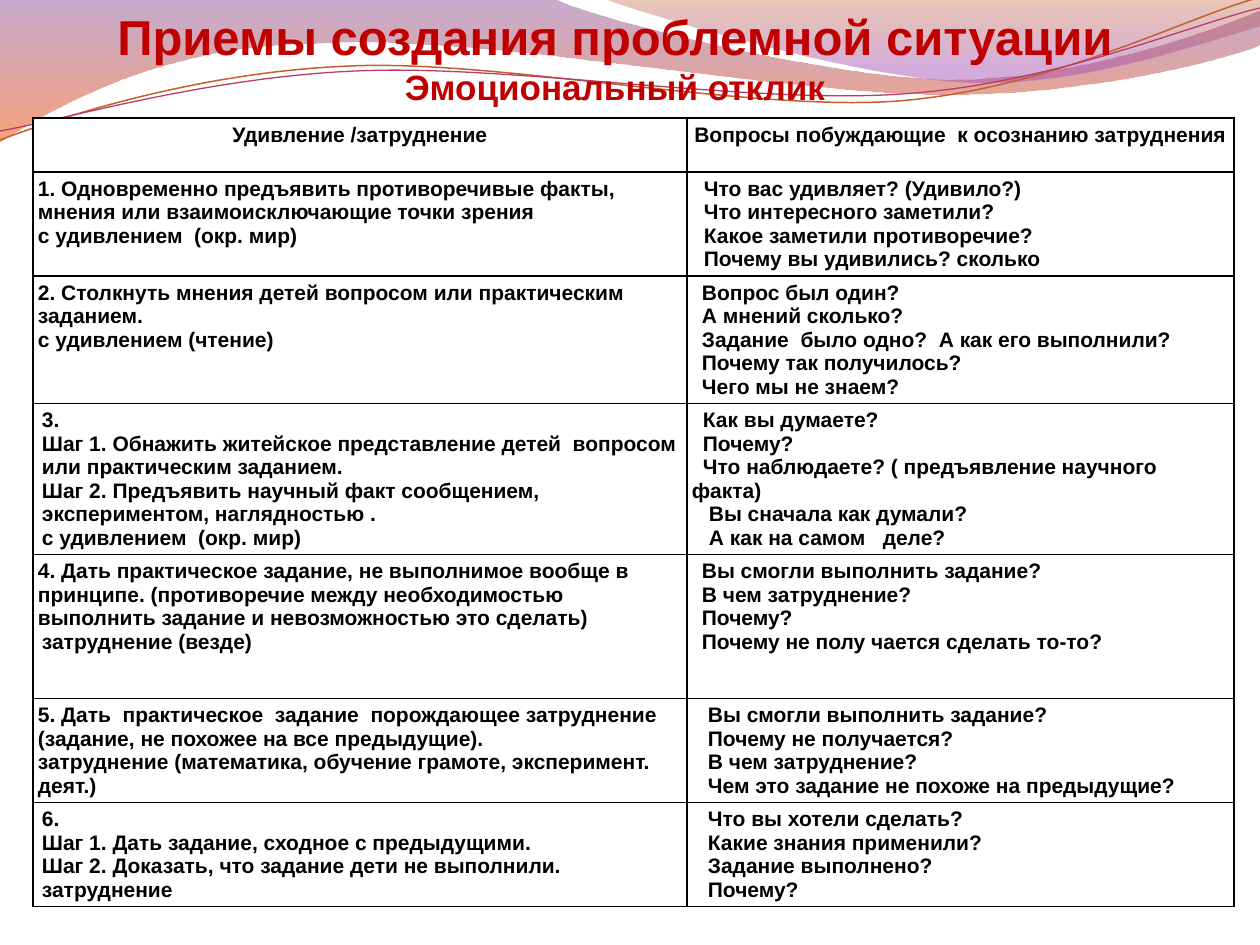
import pptx
import pptx.dml.color
import pptx.enum.text
import pptx.oxml
import pptx.oxml.ns
import pptx.util
from lxml import etree

EMU_PER_PX = 914400 / 126

WHITE = pptx.dml.color.RGBColor(0xFF, 0xFF, 0xFF)
BLACK = pptx.dml.color.RGBColor(0x00, 0x00, 0x00)
RED = pptx.dml.color.RGBColor(0xC0, 0x00, 0x00)
PLUM = pptx.dml.color.RGBColor(0x83, 0x45, 0x91)
ORANGE = pptx.dml.color.RGBColor(0xF3, 0x53, 0x07)
RUST = pptx.dml.color.RGBColor(0xB7, 0x49, 0x15)
VIOLET = pptx.dml.color.RGBColor(0xA1, 0x4B, 0xB4)
COPPER = pptx.dml.color.RGBColor(0xC4, 0x5F, 0x30)
ROSE = pptx.dml.color.RGBColor(0xB8, 0x3D, 0x68)
CENTER = pptx.enum.text.PP_ALIGN.CENTER
LEFT = pptx.enum.text.PP_ALIGN.LEFT


def write(paragraph, text, size=12, color=BLACK, align=LEFT, margin=0, indent=0):
    paragraph.alignment = align
    properties = paragraph._p.get_or_add_pPr()
    properties.set("marL", str(round(margin * EMU_PER_PX)))
    properties.set("indent", str(round(indent * EMU_PER_PX)))
    run = paragraph.add_run()
    run.text = text
    run.font.name = "Arial"
    run.font.size = pptx.util.Pt(size)
    run.font.bold = True
    run.font.color.rgb = color


def trace(shapes, start, segments, close):
    """Two numbers make a straight segment, six make a cubic curve."""
    ends = [segment[-2:] for segment in segments]
    left = min(x for x, y in [start, *ends])
    top = min(y for x, y in [start, *ends])
    builder = shapes.build_freeform(*start, scale=EMU_PER_PX)
    builder.add_line_segments(ends, close=close)
    outline = builder.convert_to_shape()
    outline.shadow.inherit = False
    steps = list(outline._element.iter(pptx.oxml.ns.qn("a:lnTo")))
    for step, segment in zip(steps, segments):
        if len(segment) == 6:
            step.tag = pptx.oxml.ns.qn("a:cubicBezTo")
            for number in (0, 2):
                control = etree.Element(pptx.oxml.ns.qn("a:pt"))
                control.set("x", str(segment[number] - left))
                control.set("y", str(segment[number + 1] - top))
                step.insert(number // 2, control)
    return outline


deck = pptx.Presentation()
deck.slide_width = round(1260 * EMU_PER_PX)
deck.slide_height = round(945 * EMU_PER_PX)
slide = deck.slides.add_slide(deck.slide_layouts[5])

# Translucent waves along the top: start, segments, gradient stops
waves = [
    ((0, -1), [(554, -1), (600, 21, 837, 79, 955, 79), (1074, 79, 1207, 33, 1260, 11),
               (1261, 45), (1239, 55, 1096, 96, 940, 94), (784, 94, 481, 35, 324, 43),
               (163, 44, 58, 105, -1, 142)],
     [(0, PLUM, 45), (1, ORANGE, 55)]),
    ((604, -1), [(641, 14, 859, 78, 969, 82), (1079, 87, 1211, 40, 1260, 26), (1260, 0)],
     [(0, RUST, 30), (0.8, VIOLET, 45)]),
]
for start, segments, stops in waves:
    wave = trace(slide.shapes, start, segments, close=True)
    wave.line.fill.background()
    wave.fill.gradient()
    wave.fill.gradient_angle = 270
    for stop, (position, color, opacity) in zip(wave.fill.gradient_stops, stops):
        stop.position = position
        stop.color.rgb = color
        tint = stop._gs.find(pptx.oxml.ns.qn("a:srgbClr"))
        etree.SubElement(tint, pptx.oxml.ns.qn("a:alpha")).set("val", str(opacity * 1000))

# Thin lines that follow the waves
strands = [
    ((0, 140), [(60, 117, 199, 72, 349, 66), (498, 59, 747, 112, 898, 101),
                (1050, 89, 1182, 19, 1257, -2)], COPPER, 0.85),
    ((0, 131), [(59, 121, 207, 77, 357, 71), (508, 64, 752, 105, 903, 94),
                (1053, 84, 1186, 26, 1260, 8)], ROSE, 0.75),
]
for start, segments, color, width in strands:
    strand = trace(slide.shapes, start, segments, close=False)
    strand.fill.background()
    strand.line.color.rgb = color
    strand.line.width = pptx.util.Pt(width)

# Table rows: least height, left paragraphs, right paragraphs (text, format)
margin_4, margin_10, margin_12, margin_16 = ({"margin": px} for px in (4, 10, 12, 16))
rows = [
    (54, [("Удивление /затруднение", {"align": CENTER})],
     [("Вопросы побуждающие  к осознанию затруднения", {"align": CENTER})]),
    (103, [("1. Одновременно предъявить противоречивые факты,  мнения или "
            "взаимоисключающие точки зрения", {}),
           ("с удивлением  (окр. мир)", {})],
     [("Что вас удивляет? (Удивило?)", margin_12),
      ("Что интересного заметили?", margin_12),
      ("Какое заметили противоречие?", margin_12),
      ("Почему вы удивились? сколько", margin_12)]),
    (126, [("2. Столкнуть мнения детей вопросом или практическим заданием.", {}),
           ("с удивлением (чтение)", {})],
     [("Вопрос был один?", margin_10),
      ("А мнений сколько?", margin_10),
      ("Задание  было одно?  А как его выполнили?", margin_10),
      ("Почему так получилось?", margin_10),
      ("Чего мы не знаем?", margin_10)]),
    (149, [("3.", margin_4),
           ("Шаг 1. Обнажить житейское представление детей  вопросом или "
            "практическим заданием.", margin_4),
           ("Шаг 2. Предъявить научный факт сообщением, экспериментом, "
            "наглядностью .", margin_4),
           ("с удивлением  (окр. мир)", margin_4)],
     [("Как вы думаете?", {"indent": 11}),
      ("Почему?", {"indent": 11}),
      ("Что наблюдаете? ( предъявление научного факта)", {"indent": 11}),
      ("Вы сначала как думали?", {"indent": 17}),
      ("А как на самом   деле?", {"indent": 17})]),
    (144, [("4. Дать практическое задание, не выполнимое вообще в принципе. "
            "(противоречие между необходимостью выполнить задание и "
            "невозможностью это сделать)", {}),
           ("затруднение (везде)", {"margin": 19, "indent": -15})],
     [("Вы смогли выполнить задание?", margin_10),
      ("В чем затруднение?", margin_10),
      ("Почему?", margin_10),
      ("Почему не полу чается сделать то-то?", margin_10)]),
    (103, [("5. Дать  практическое  задание  порождающее затруднение  "
            "(задание, не похожее на все предыдущие).", {}),
           ("затруднение (математика, обучение грамоте, эксперимент. деят.)", {})],
     [("Вы смогли выполнить задание?", margin_16),
      ("Почему не получается?", margin_16),
      ("В чем затруднение?", margin_16),
      ("Чем это задание не похоже на предыдущие?", margin_16)]),
    (104, [("6.", margin_4),
           ("Шаг 1. Дать задание, сходное с предыдущими.", margin_4),
           ("Шаг 2. Доказать, что задание дети не выполнили.    затруднение", margin_4)],
     [("Что вы хотели сделать?", margin_16),
      ("Какие знания применили?", margin_16),
      ("Задание выполнено?", margin_16),
      ("Почему?", margin_16)]),
]
column_widths = [654, 547]
box = (33, 118, sum(column_widths), sum(row[0] for row in rows))
methods = slide.shapes.add_table(
    len(rows), len(column_widths), *(round(px * EMU_PER_PX) for px in box)).table
methods.first_row = False
methods.horz_banding = False
for column, width in zip(methods.columns, column_widths):
    column.width = round(width * EMU_PER_PX)

inset = round(5 * EMU_PER_PX)
for row, (height, *contents) in zip(methods.rows, rows):
    row.height = round(height * EMU_PER_PX)
    for cell, paragraphs in zip(row.cells, contents):
        cell.margin_left = cell.margin_right = inset
        cell.margin_top = cell.margin_bottom = inset
        for side in "LRTB":
            cell._tc.get_or_add_tcPr().append(pptx.oxml.parse_xml(
                f'<a:ln{side} {pptx.oxml.ns.nsdecls("a")} w="12700"><a:solidFill>'
                f'<a:srgbClr val="{BLACK}"/></a:solidFill></a:ln{side}>'))
        cell.fill.solid()
        cell.fill.fore_color.rgb = WHITE
        for number, (text, layout) in enumerate(paragraphs):
            frame = cell.text_frame
            write(frame.add_paragraph() if number else frame.paragraphs[0], text, **layout)

# Title, brought in front of the waves
heading = slide.shapes.title
heading.left, heading.top, heading.width, heading.height = (
    round(px * EMU_PER_PX) for px in (35, 0, 1160, 114))
heading.text_frame.word_wrap = True
heading.text_frame.auto_size = pptx.enum.text.MSO_AUTO_SIZE.NONE
heading.text_frame.vertical_anchor = pptx.enum.text.MSO_ANCHOR.BOTTOM
heading_line = heading.text_frame.paragraphs[0]
write(heading_line, "Приемы создания проблемной ситуации", size=28, color=RED, align=CENTER)
heading_line.add_line_break()
write(heading_line, "Эмоциональный отклик", size=20, color=RED, align=CENTER)
slide.shapes._spTree.append(heading._element)

deck.save("out.pptx")
